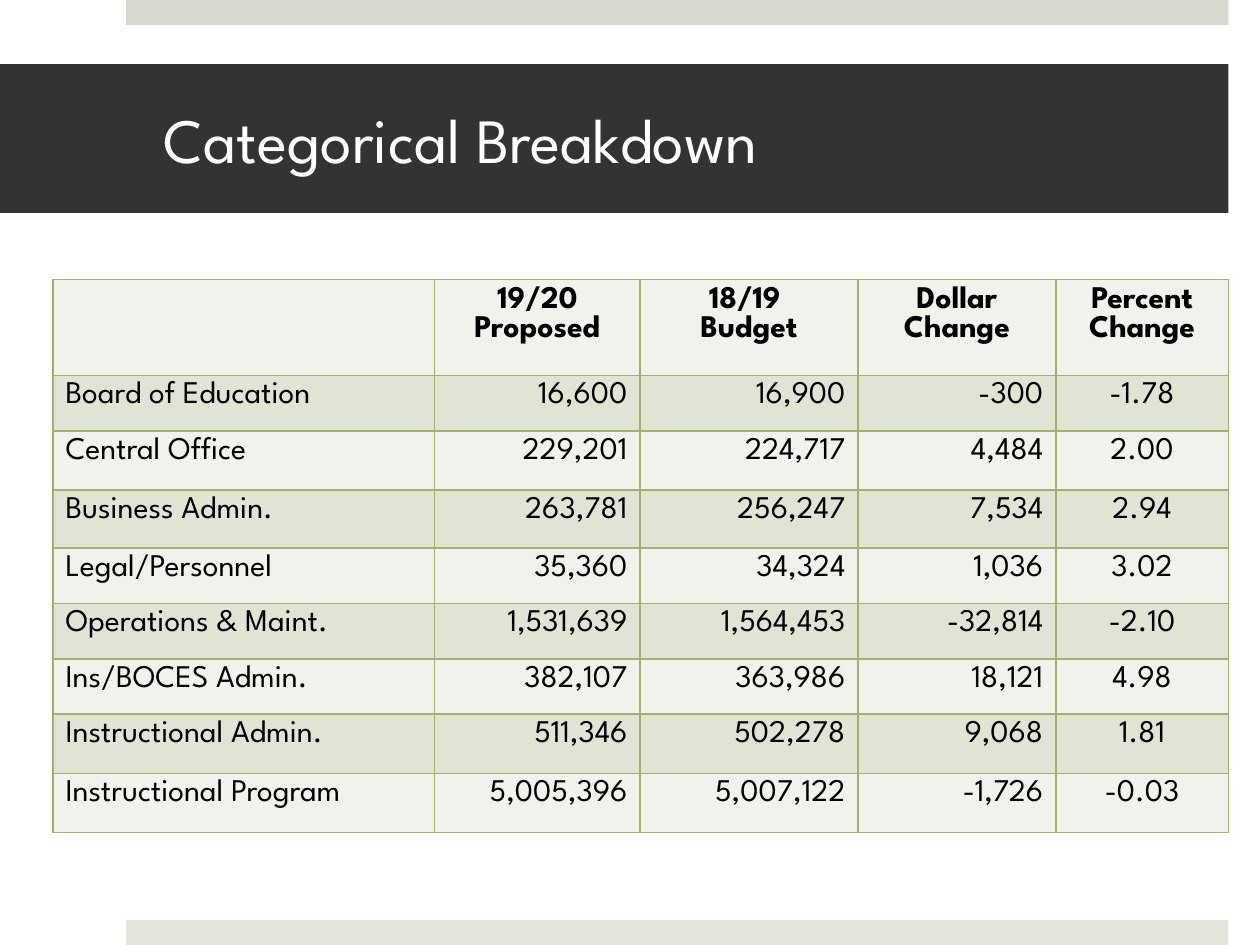
"""Build a budget slide with a title band and a categorical breakdown table."""
import pptx
import pptx.dml.color
import pptx.enum.shapes
import pptx.enum.text
import pptx.oxml
import pptx.oxml.ns
import pptx.util

RGBColor = pptx.dml.color.RGBColor
Inches = pptx.util.Inches
Align = pptx.enum.text.PP_ALIGN

WHITE = RGBColor(0xFF, 0xFF, 0xFF)
BLACK = RGBColor(0x00, 0x00, 0x00)
CHARCOAL = RGBColor(0x33, 0x33, 0x33)
SAGE = RGBColor(0xD6, 0xD9, 0xCD)
PALE_SAGE = RGBColor(0xE4, 0xE6, 0xDE)
OLIVE = RGBColor(0xA2, 0xB1, 0x70)
ROW_TINTS = [RGBColor(0xF0, 0xF2, 0xEB), RGBColor(0xE0, 0xE4, 0xD5)]
TYPEFACE = "League Spartan"

deck = pptx.Presentation()
deck.slide_width = Inches(10)
deck.slide_height = Inches(7.5)
slide = deck.slides.add_slide(deck.slide_layouts[6])


def add_band(left, top, width, height, color):
    band = slide.shapes.add_shape(
        pptx.enum.shapes.MSO_SHAPE.RECTANGLE,
        Inches(left), Inches(top), Inches(width), Inches(height))
    band.shadow.inherit = False
    band.fill.solid()
    band.fill.fore_color.rgb = color
    band.line.fill.background()
    return band


def set_font(paragraph, size, color, bold=False):
    paragraph.font.name = TYPEFACE
    paragraph.font.size = pptx.util.Pt(size)
    paragraph.font.bold = bold
    paragraph.font.color.rgb = color


right_edge = 9.75
strip_left, strip_height = 1, 0.2
strip_width = right_edge - strip_left
add_band(strip_left, 0, strip_width, strip_height, SAGE)
add_band(strip_left, 7.5 - strip_height, strip_width, strip_height, PALE_SAGE)

heading = add_band(0, 0.51, right_edge, 1.18, CHARCOAL).text_frame
heading.word_wrap = True
heading.vertical_anchor = pptx.enum.text.MSO_ANCHOR.MIDDLE
heading.margin_left, heading.margin_right = Inches(1.3), Inches(0.3)
heading.text = "Categorical Breakdown"
heading.paragraphs[0].alignment = Align.LEFT
set_font(heading.paragraphs[0], 36, WHITE)

budget_rows = [
    ("", "19/20 Proposed", "18/19 \nBudget", "Dollar Change", "Percent Change"),
    ("Board of Education", "16,600", "16,900", "-300", "-1.78"),
    ("Central Office", "229,201", "224,717", "4,484", "2.00"),
    ("Business Admin.", "263,781", "256,247", "7,534", "2.94"),
    ("Legal/Personnel", "35,360", "34,324", "1,036", "3.02"),
    ("Operations & Maint.", "1,531,639", "1,564,453", "-32,814", "-2.10"),
    ("Ins/BOCES Admin.", "382,107", "363,986", "18,121", "4.98"),
    ("Instructional Admin.", "511,346", "502,278", "9,068", "1.81"),
    ("Instructional Program", "5,005,396", "5,007,122", "-1,726", "-0.03"),
]
column_widths = [3.03, 1.63, 1.73, 1.57, 1.37]
row_heights = [0.76, 0.44, 0.47, 0.46, 0.44, 0.44, 0.44, 0.47, 0.47]
column_aligns = [Align.LEFT, Align.RIGHT, Align.RIGHT, Align.RIGHT, Align.CENTER]

breakdown = slide.shapes.add_table(
    len(row_heights), len(column_widths), Inches(0.42), Inches(2.22),
    Inches(sum(column_widths)), Inches(sum(row_heights))).table
for column, width in zip(breakdown.columns, column_widths):
    column.width = Inches(width)
for row, height in zip(breakdown.rows, row_heights):
    row.height = Inches(height)

for r, entries in enumerate(budget_rows):
    is_header = r == 0
    for c, entry in enumerate(entries):
        cell = breakdown.cell(r, c)
        cell.text = entry
        for side in ("lnL", "lnR", "lnT", "lnB"):
            cell._tc.get_or_add_tcPr().append(pptx.oxml.parse_xml(
                f'<a:{side} {pptx.oxml.ns.nsdecls("a")} w="12700"><a:solidFill>'
                f'<a:srgbClr val="{OLIVE}"/></a:solidFill></a:{side}>'))
        cell.fill.solid()
        cell.fill.fore_color.rgb = ROW_TINTS[r % 2]
        for paragraph in cell.text_frame.paragraphs:
            paragraph.alignment = Align.CENTER if is_header else column_aligns[c]
            set_font(paragraph, 18, BLACK, is_header)

deck.save("out.pptx")
